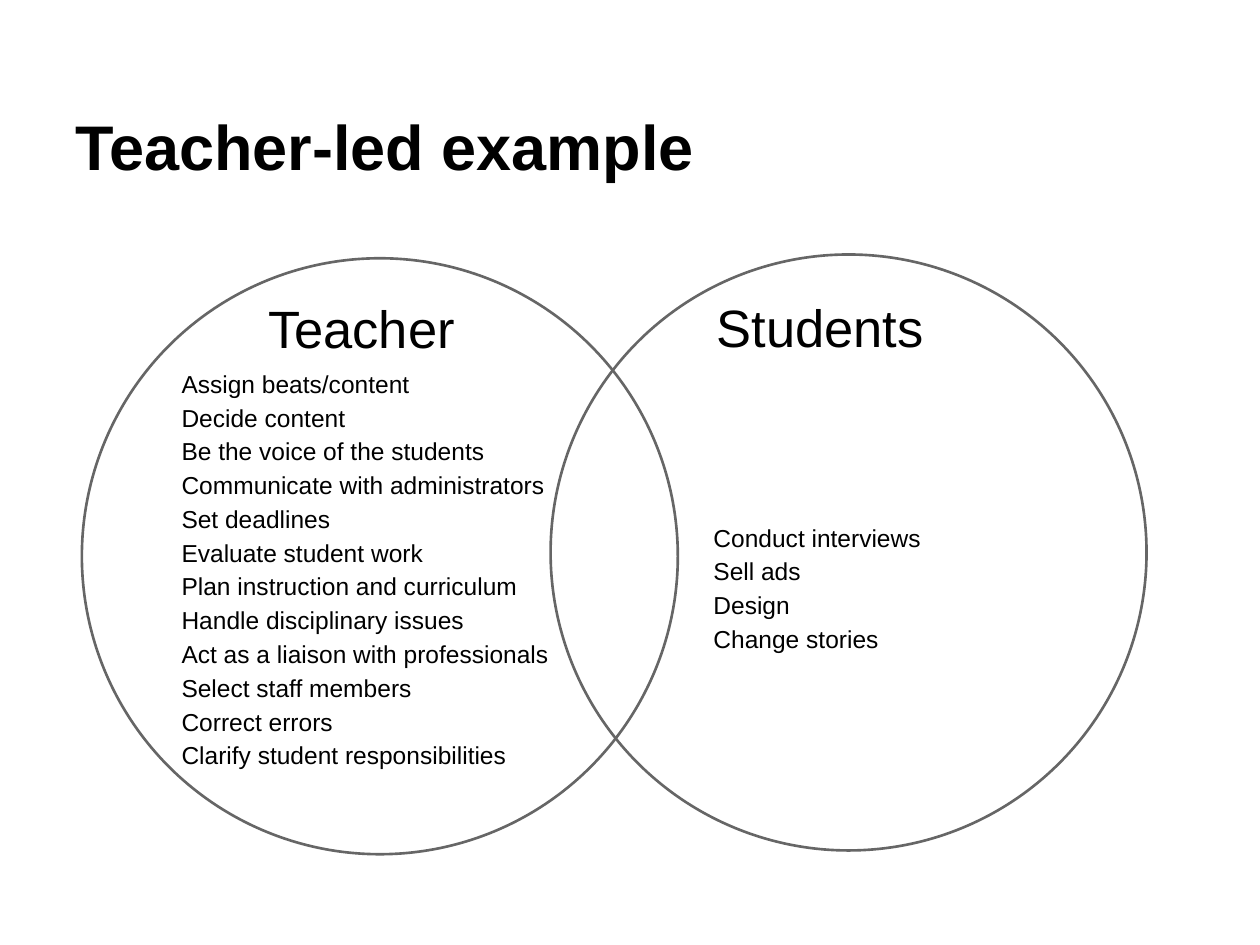
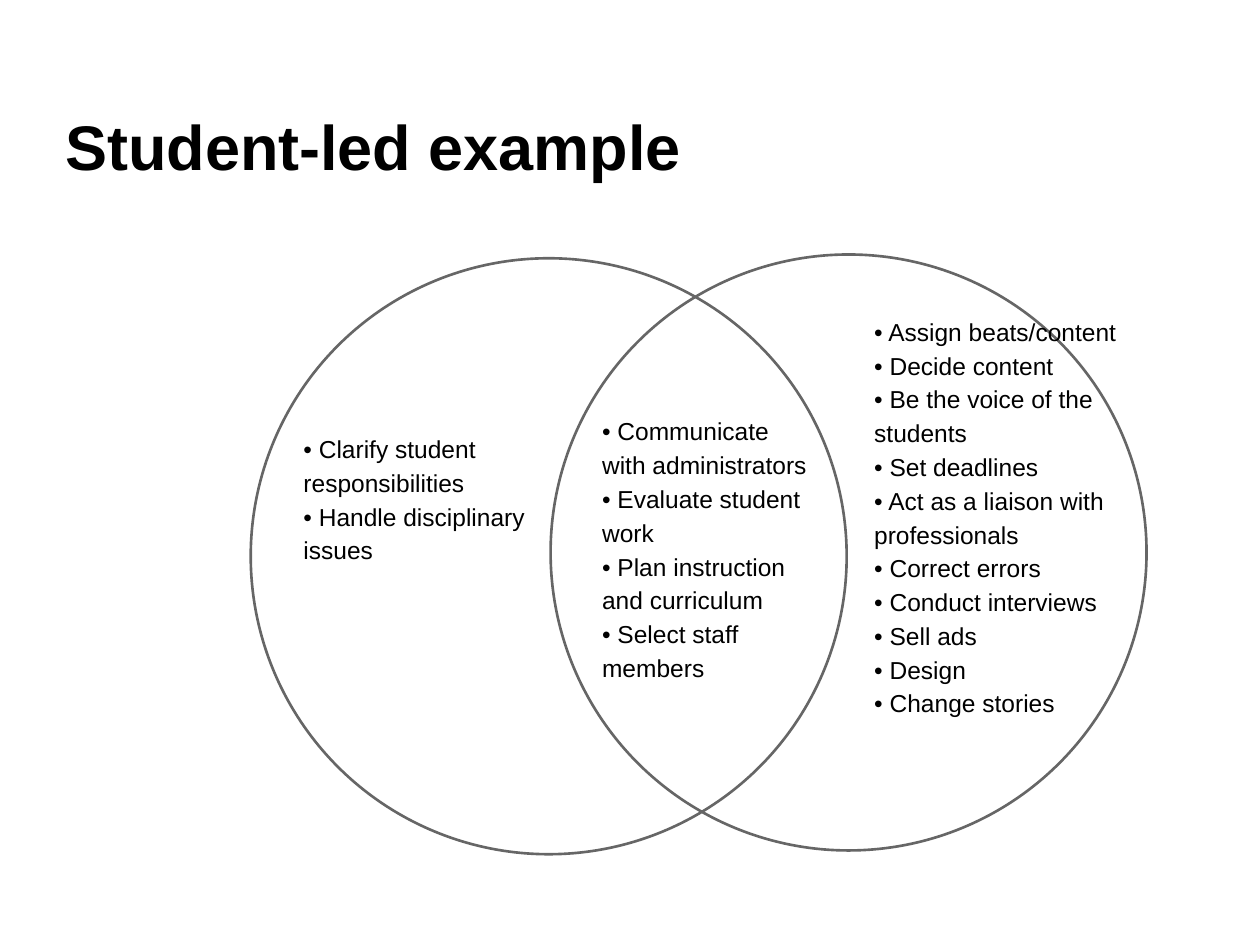
from dataclasses import dataclass

from pptx import Presentation
from pptx.dml.color import RGBColor
from pptx.enum.shapes import MSO_SHAPE
from pptx.enum.text import MSO_ANCHOR, PP_ALIGN
from pptx.util import Emu, Pt

OVAL = MSO_SHAPE.OVAL
TOP, BOTTOM = MSO_ANCHOR.TOP, MSO_ANCHOR.BOTTOM
LEFT = PP_ALIGN.LEFT
EMU_PER_PX = 9144  # 100 px to the inch


@dataclass(frozen=True)
class Theme:
    font: str = "Arial"
    ink: RGBColor = RGBColor(0x00, 0x00, 0x00)
    outline: RGBColor = RGBColor(0x66, 0x66, 0x66)
    outline_width: float = 1.5
    title_size: int = 36
    heading_size: int = 30
    list_size: int = 14
    list_spacing: float = 1.15


THEME = Theme()
PADDING = 10
CIRCLE_SIZE = 473
RIGHT_CIRCLE = (437, 202)


def px(length):
    return Emu(length * EMU_PER_PX)


def write(shape, lines, size, bold=False, spacing=1.0, anchor=TOP,
          insets=(PADDING, PADDING, PADDING, PADDING)):
    """Fill a shape with one paragraph per line; insets are left, top, right, bottom."""
    frame = shape.text_frame
    frame.word_wrap = True
    frame.vertical_anchor = anchor
    (frame.margin_left, frame.margin_top,
     frame.margin_right, frame.margin_bottom) = map(px, insets)
    frame.text = "\n".join(lines)
    for para in frame.paragraphs:
        para.alignment = LEFT
        para.line_spacing = spacing
        for span in para.runs:
            span.font.name = THEME.font
            span.font.size = Pt(size)
            span.font.bold = bold
            span.font.color.rgb = THEME.ink


deck = Presentation()
deck.slide_width, deck.slide_height = px(1000), px(750)
blank_layout = deck.slide_layouts[6]

# Title, title left edge, left circle position
venn_slides = [
    ("Teacher-led example", 50, (65, 205)),
    ("Student-led example", 42, (199, 205)),
]
pages, circle_pairs = [], []
for title, title_left, left_circle in venn_slides:
    page = deck.slides.add_slide(blank_layout)
    title_box = page.shapes.add_textbox(px(title_left), px(30), px(900), px(125))
    write(title_box, [title], THEME.title_size, bold=True, anchor=BOTTOM)
    circles = []
    for left, top in (left_circle, RIGHT_CIRCLE):
        circle = page.shapes.add_shape(
            OVAL, px(left), px(top), px(CIRCLE_SIZE), px(CIRCLE_SIZE))
        circle.shadow.inherit = False
        circle.fill.background()
        circle.line.color.rgb = THEME.outline
        circle.line.width = Pt(THEME.outline_width)
        circles.append(circle)
    pages.append(page)
    circle_pairs.append(circles)

teacher_page, student_page = pages

# Teacher-led: the lists sit inside the circles
teacher_tasks = [
    "Assign beats/content",
    "Decide content",
    "Be the voice of the students",
    "Communicate with administrators",
    "Set deadlines",
    "Evaluate student work",
    "Plan instruction and curriculum",
    "Handle disciplinary issues",
    "Act as a liaison with professionals",
    "Select staff members",
    "Correct errors",
    "Clarify student responsibilities",
]
student_tasks = ["Conduct interviews", "Sell ads", "Design", "Change stories"]
circle_lists = [
    (teacher_tasks, (PADDING, 15, PADDING, 0)),
    (student_tasks, (60, 140, PADDING, 0)),
]
for circle, (tasks, insets) in zip(circle_pairs[0], circle_lists):
    write(circle, tasks, THEME.list_size, spacing=THEME.list_spacing, insets=insets)

headings = [
    ("Teacher", 203, 225, 360, 58),
    ("Students", 559, 224, 239, 123),
]
for heading, *bounds in headings:
    heading_box = teacher_page.shapes.add_textbox(*map(px, bounds))
    write(heading_box, [heading], THEME.heading_size)

# Student-led: one list for each region of the diagram
region_lists = [
    ((231, 331, 211, 138), [
        "Clarify student responsibilities",
        "Handle disciplinary issues",
    ]),
    ((468, 317, 191, 428), [
        "Communicate with administrators",
        "Evaluate student work",
        "Plan instruction and curriculum",
        "Select staff members",
    ]),
    ((684, 238, 224, 498), [
        "Assign beats/content",
        "Decide content",
        "Be the voice of the students",
        "Set deadlines",
        "Act as a liaison with professionals",
        "Correct errors",
        "Conduct interviews",
        "Sell ads",
        "Design",
        "Change stories",
    ]),
]
for bounds, tasks in region_lists:
    list_box = student_page.shapes.add_textbox(*map(px, bounds))
    write(list_box, [f"• {task}" for task in tasks], THEME.list_size,
          spacing=THEME.list_spacing)

deck.save("out.pptx")
